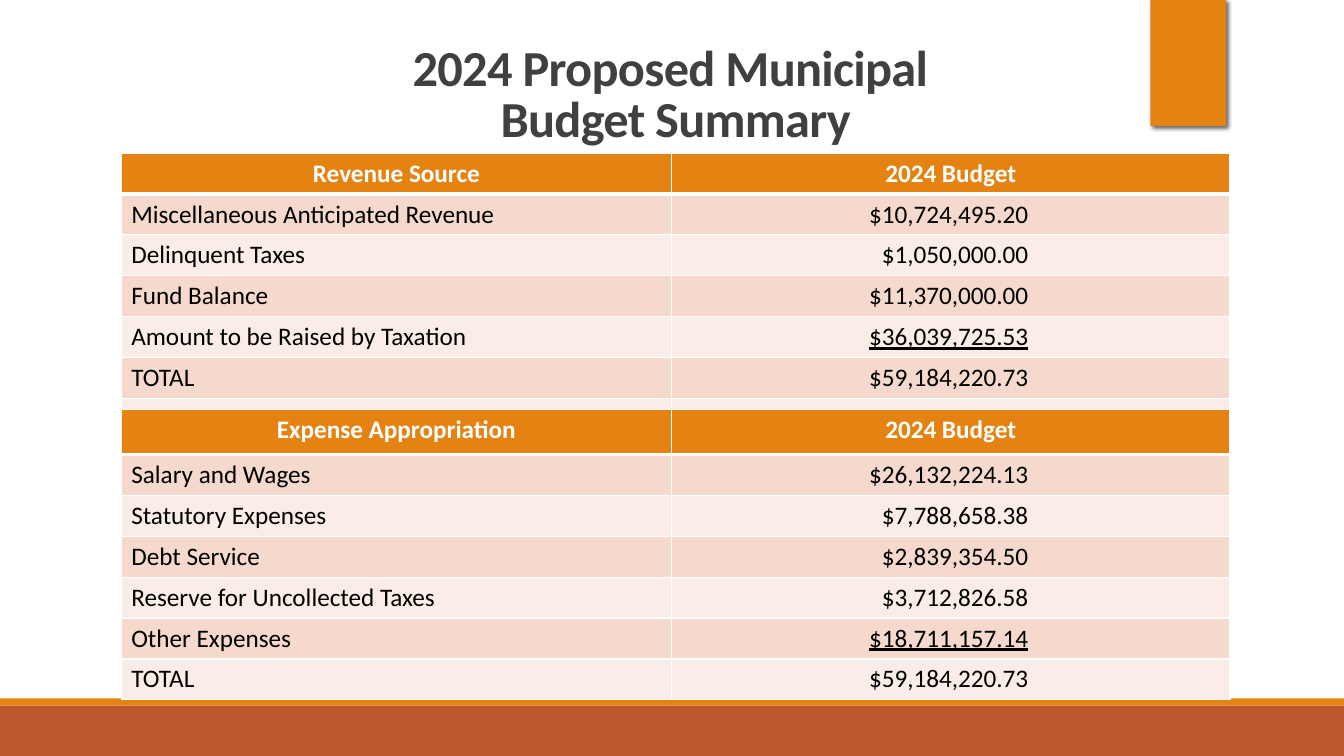
"""Build the 2024 municipal budget summary slide."""
from dataclasses import dataclass

from lxml import etree
from pptx import Presentation
from pptx import util as u
from pptx.dml.color import RGBColor
from pptx.enum import shapes, text
from pptx.oxml import parse_xml
from pptx.oxml.ns import nsdecls, qn


@dataclass(frozen=True)
class Theme:
    font: str = "Calibri"
    head: float = 36
    body: float = 18
    white: str = "FFFFFF"
    black: str = "000000"
    gray: str = "404040"
    gold: str = "E48312"
    rust: str = "BD582C"
    bands: tuple[str, str] = ("F5D9CC", "FAEDE7")


@dataclass(frozen=True)
class Block:
    left: float
    top: float
    width: float
    height: float
    fill: str
    shade: bool = False


@dataclass(frozen=True)
class Row:
    label: str
    amount: str
    under: bool = False


@dataclass(frozen=True)
class Grid:
    top: float
    first: float
    title: str
    rows: tuple[Row, ...]


THEME = Theme()
LEFT, COLS, PITCH, INDENT = 86.6, (393.1, 398.9), 29.16, 144
WIDE, HIGH = 960, 540

BLOCKS = (
    Block(0, 504, WIDE, 36, THEME.rust),
    Block(0, 498.9, WIDE, 5.1, THEME.gold),
    Block(821.8, 0, 54, 90, THEME.gold, True),
)

GRIDS = (
    Grid(109.4, PITCH, "Revenue Source", (
        Row("Miscellaneous Anticipated Revenue", "$10,724,495.20"),
        Row("Delinquent Taxes", "$1,050,000.00"),
        Row("Fund Balance", "$11,370,000.00"),
        Row("Amount to be Raised by Taxation", "$36,039,725.53", True),
        Row("TOTAL", "$59,184,220.73"),
        Row("", ""),
    )),
    Grid(292.7, 32, "Expense Appropriation", (
        Row("Salary and Wages", "$26,132,224.13"),
        Row("Statutory Expenses", "$7,788,658.38"),
        Row("Debt Service", "$2,839,354.50"),
        Row("Reserve for Uncollected Taxes", "$3,712,826.58"),
        Row("Other Expenses", "$18,711,157.14", True),
        Row("TOTAL", "$59,184,220.73"),
    )),
)


def add_run(para, words: str, size: float, color: str,
            bold: bool = False, under: bool = False):
    run = para.add_run()
    run.text = words
    font = run.font
    font.name, font.size = THEME.font, u.Pt(size)
    font.bold, font.underline = bold, under
    font.color.rgb = RGBColor.from_string(color)
    return run


def add_block(slide, block: Block) -> None:
    shape = slide.shapes.add_shape(
        shapes.MSO_SHAPE.RECTANGLE, u.Pt(block.left), u.Pt(block.top),
        u.Pt(block.width), u.Pt(block.height))
    shape.fill.solid()
    shape.fill.fore_color.rgb = RGBColor.from_string(block.fill)
    shape.line.fill.background()
    shape.shadow.inherit = False
    if block.shade:
        glow = shape.element.spPr.find(qn("a:effectLst"))
        glow.append(parse_xml(
            f'<a:outerShdw {nsdecls("a")} blurRad="{u.Pt(3)}" dist="{u.Pt(2)}" '
            f'dir="2700000" algn="tl" rotWithShape="0"><a:srgbClr val="{THEME.black}">'
            '<a:alpha val="60000"/></a:srgbClr></a:outerShdw>'))


def add_title(slide) -> None:
    title = slide.shapes.title
    title.left, title.top = u.Pt(LEFT), u.Pt(7.9)
    title.width, title.height = u.Pt(sum(COLS)), u.Pt(101.5)
    frame = title.text_frame
    frame.word_wrap = True
    frame.auto_size = text.MSO_AUTO_SIZE.NONE
    frame.vertical_anchor = text.MSO_ANCHOR.BOTTOM
    para = frame.paragraphs[0]
    para.alignment = text.PP_ALIGN.CENTER
    para.line_spacing = 0.85
    for num, words in enumerate(("2024 Proposed Municipal ", "Budget Summary")):
        if num:
            para.add_line_break()
        run = add_run(para, words, THEME.head, THEME.gray, True)
        run.font._element.set("spc", "-50")


def style_cell(cell, fill: str, base: float) -> None:
    props = cell._tc.get_or_add_tcPr()
    for side, width in (("L", 1), ("R", 1), ("T", 1), ("B", base)):
        line = etree.SubElement(props, qn(f"a:ln{side}"), w=str(u.Pt(width)))
        solid = etree.SubElement(line, qn("a:solidFill"))
        etree.SubElement(solid, qn("a:srgbClr"), val=THEME.white)
    cell.fill.solid()
    cell.fill.fore_color.rgb = RGBColor.from_string(fill)


def add_grid(slide, grid: Grid) -> None:
    count = len(grid.rows) + 1
    table = slide.shapes.add_table(
        count, len(COLS), u.Pt(LEFT), u.Pt(grid.top), u.Pt(sum(COLS)),
        u.Pt(grid.first + PITCH * (count - 1))).table
    for col, width in zip(table.columns, COLS):
        col.width = u.Pt(width)
    for num, row in enumerate((Row(grid.title, "2024 Budget"), *grid.rows)):
        head = num == 0
        table.rows[num].height = u.Pt(PITCH if num else grid.first)
        fill = THEME.gold if head else THEME.bands[(num - 1) % 2]
        for pos, words in enumerate((row.label, row.amount)):
            cell = table.cell(num, pos)
            style_cell(cell, fill, 3 if head else 1)
            para = cell.text_frame.paragraphs[0]
            if head:
                para.alignment = text.PP_ALIGN.CENTER
            elif pos:
                para.alignment = text.PP_ALIGN.RIGHT
                cell.margin_right = u.Pt(INDENT)
            if words:
                add_run(para, words, THEME.body,
                        THEME.white if head else THEME.black,
                        head, row.under and pos == 1)


def main() -> None:
    deck = Presentation()
    deck.slide_width, deck.slide_height = u.Pt(WIDE), u.Pt(HIGH)
    slide = deck.slides.add_slide(deck.slide_layouts[5])
    for block in BLOCKS:
        add_block(slide, block)
    add_title(slide)
    for grid in GRIDS:
        add_grid(slide, grid)
    deck.save("out.pptx")


if __name__ == "__main__":
    main()
